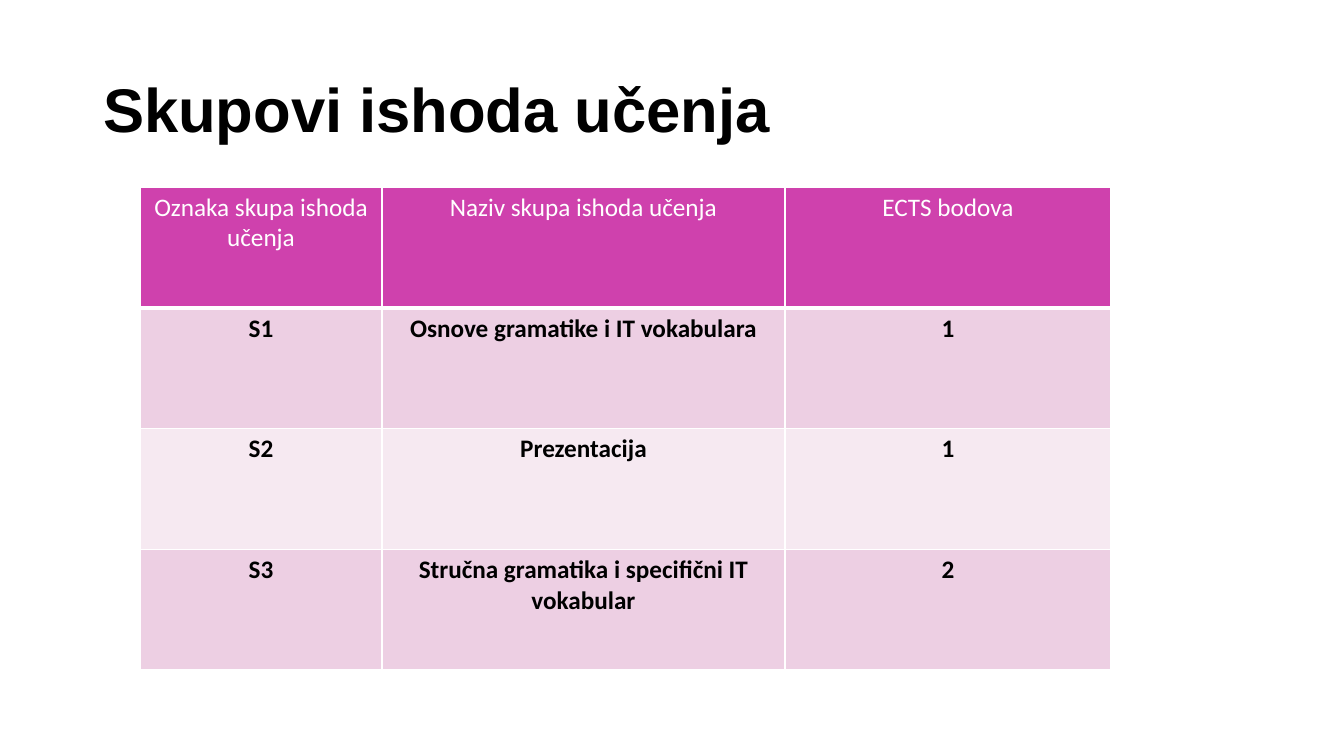
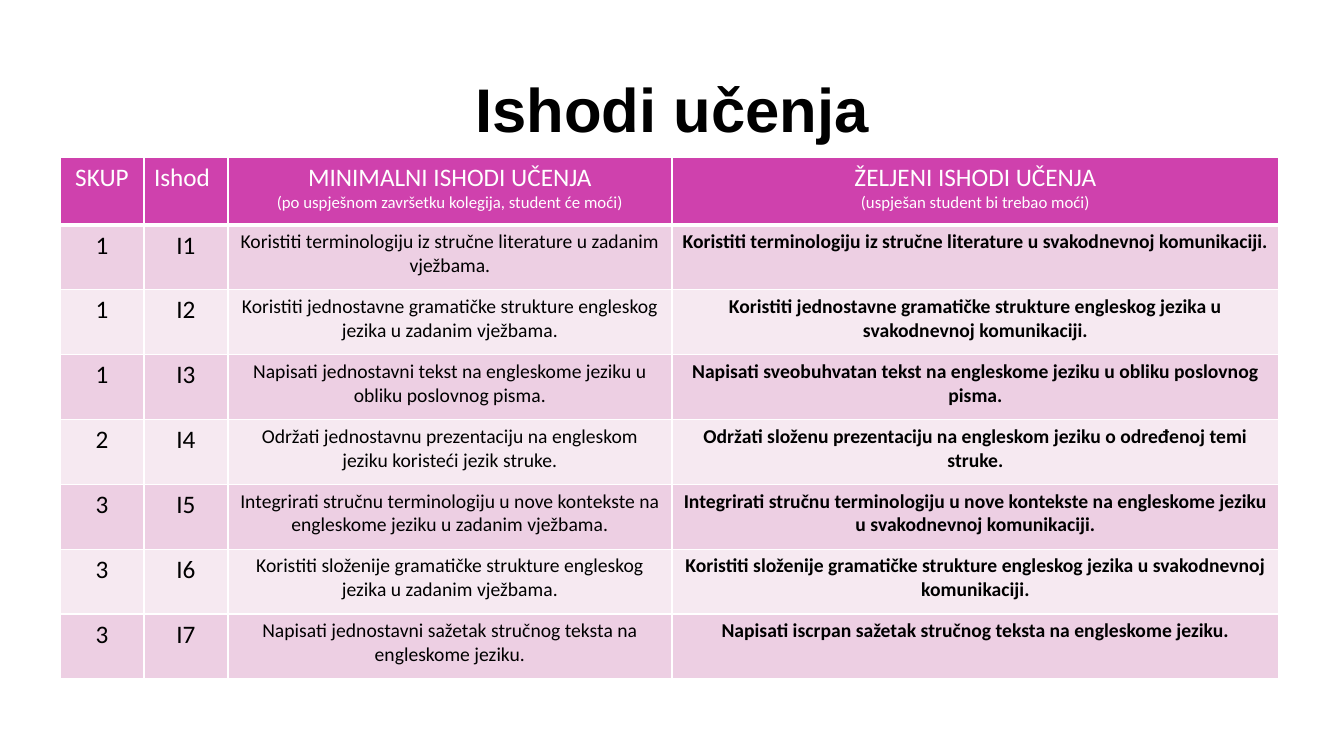
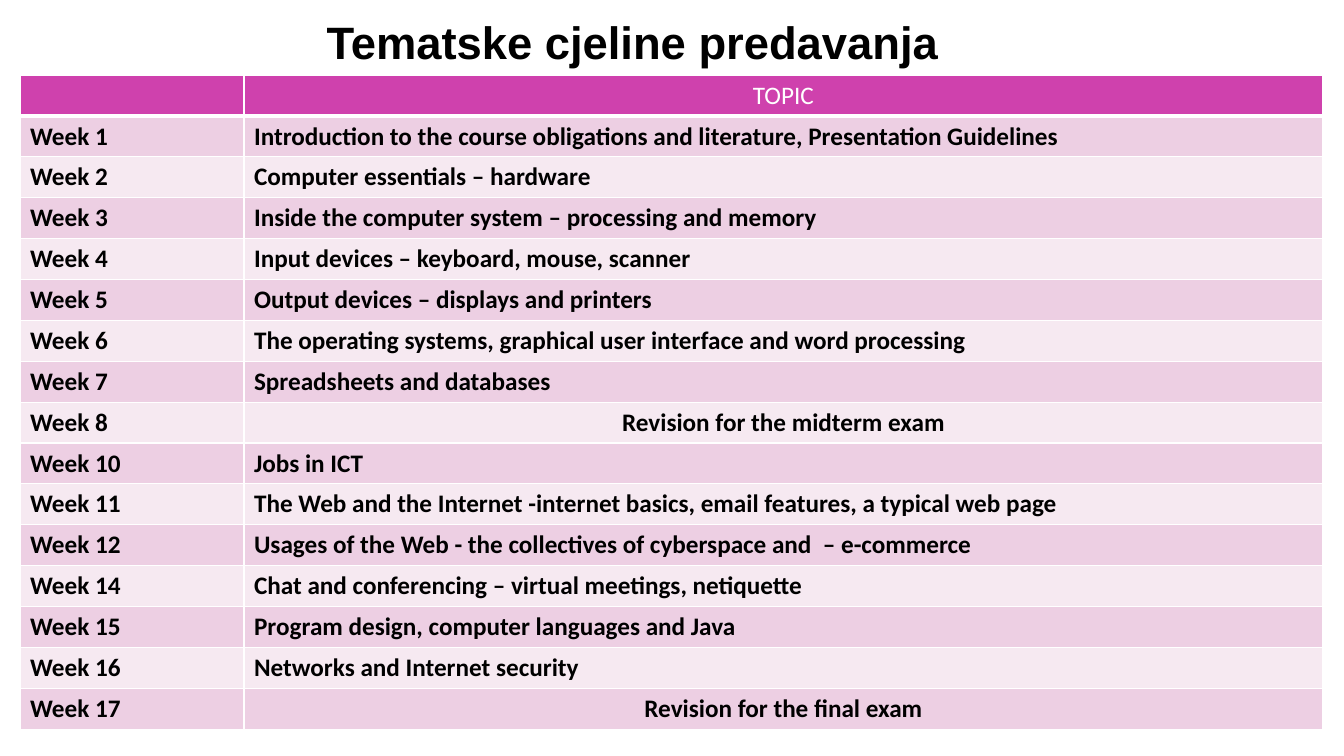
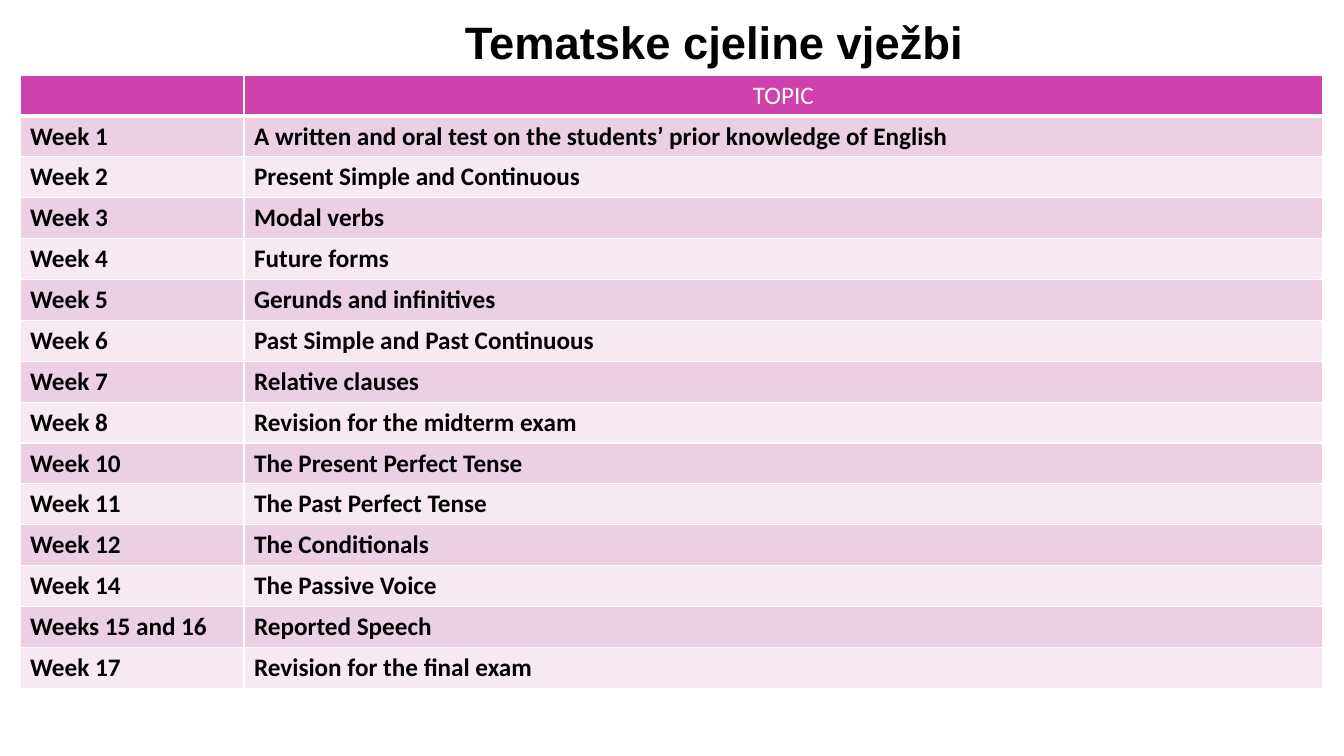
from dataclasses import dataclass

from pptx import Presentation
from pptx import util as u
from pptx.dml.color import RGBColor
from pptx.enum import text
from pptx.oxml.ns import qn
from lxml import etree

EMU_PER_PX = 914400 / 100.8
COLORS = {
    "header": "CF41AD",
    "odd": "EDCFE3",
    "even": "F6E9F1",
    "white": "FFFFFF",
    "black": "000000",
}
TITLE_FONT, TABLE_FONT = "Arial", "Calibri"
TABLE_SIZE, NOTE_SIZE = 18, 12
LEFT, CENTER = text.PP_ALIGN.LEFT, text.PP_ALIGN.CENTER


@dataclass(frozen=True)
class Title:
    text: str
    box: tuple[int, int, int, int]
    size: float = 44
    align: text.PP_ALIGN = CENTER
    indent: int = 0


@dataclass(frozen=True)
class Column:
    header: str
    width: int
    align: text.PP_ALIGN = CENTER
    size: int = TABLE_SIZE
    bold: bool = True
    header_align: text.PP_ALIGN = CENTER


@dataclass(frozen=True)
class Grid:
    left: int
    top: int
    header_height: int
    body_height: int
    columns: tuple[Column, ...]
    rows: tuple[tuple[str, ...], ...]
    centered: tuple[str, ...] = ()


def px(n: float) -> u.Emu:
    return u.Emu(round(n * EMU_PER_PX))


def rgb(name: str) -> RGBColor:
    return RGBColor.from_string(COLORS[name])


def add_run(p, content: str, font: str, size: float, bold: bool, color: str) -> None:
    r = p.add_run()
    r.text = content
    r.font.name, r.font.size, r.font.bold = font, u.Pt(size), bold
    r.font.color.rgb = rgb(color)


def draw_title(s, title: Title) -> None:
    sp = s.shapes.title
    sp.left, sp.top, sp.width, sp.height = map(px, title.box)
    tf = sp.text_frame
    tf.word_wrap = True
    tf.auto_size = text.MSO_AUTO_SIZE.NONE
    tf.vertical_anchor = text.MSO_ANCHOR.MIDDLE
    p = tf.paragraphs[0]
    p.alignment, p.line_spacing = title.align, 0.9
    if title.indent:
        p._p.get_or_add_pPr().set("marL", str(px(title.indent)))
    add_run(p, title.text, TITLE_FONT, title.size, True, "black")


def style_cell(cell, fill: str, bottom: int = 1) -> None:
    """Give a cell white borders (widths in points) and a solid fill."""
    tc_pr = cell._tc.get_or_add_tcPr()
    for side, width in (("L", 1), ("R", 1), ("T", 1), ("B", bottom)):
        ln = etree.SubElement(tc_pr, qn(f"a:ln{side}"), w=str(u.Pt(width)))
        solid = etree.SubElement(ln, qn("a:solidFill"))
        etree.SubElement(solid, qn("a:srgbClr"), val=COLORS["white"])
    cell.fill.solid()
    cell.fill.fore_color.rgb = rgb(fill)


def draw_header(cell, column: Column) -> None:
    """Fill a heading cell; lines after the first are small notes."""
    style_cell(cell, "header", bottom=3)
    tf = cell.text_frame
    for i, line in enumerate(column.header.splitlines()):
        p = tf.add_paragraph() if i else tf.paragraphs[0]
        p.alignment = column.header_align
        add_run(p, line, TABLE_FONT, NOTE_SIZE if i else TABLE_SIZE, False, "white")


def draw_grid(s, grid: Grid) -> None:
    width = sum(c.width for c in grid.columns)
    height = grid.header_height + grid.body_height
    frame = s.shapes.add_table(len(grid.rows) + 1, len(grid.columns),
                               px(grid.left), px(grid.top), px(width), px(height))
    table = frame.table
    table.horz_banding = False
    for i, row in enumerate(table.rows):
        row.height = px(grid.body_height / len(grid.rows) if i else grid.header_height)
    for j, column in enumerate(grid.columns):
        table.columns[j].width = px(column.width)
        draw_header(table.cell(0, j), column)
        for i, row in enumerate(grid.rows, start=1):
            cell = table.cell(i, j)
            style_cell(cell, "odd" if i % 2 else "even")
            p = cell.text_frame.paragraphs[0]
            p.alignment = CENTER if row[j] in grid.centered else column.align
            add_run(p, row[j], TABLE_FONT, column.size, column.bold, "black")


def topic_slide(name: str, indent: int, rows: tuple[tuple[str, str], ...],
                centered: tuple[str, ...] = ()) -> tuple[Title, Grid]:
    """Weekly plan: a compact title over a table of weeks and topics."""
    row_height = 40.8
    columns = (Column("", 224, LEFT), Column("TOPIC", 1079, LEFT))
    return (Title(name, (137, 31, 979, 27), 32.4, indent=indent),
            Grid(20, 75, round(row_height), round(row_height * len(rows)),
                 columns, rows, centered))


TITLE_BOX = (93, 40, 1159, 146)

SLIDES = (
    (
        Title("Skupovi ishoda učenja", TITLE_BOX, align=LEFT),
        Grid(
            140, 187, 121, 362,
            (Column("Oznaka skupa ishoda učenja", 242),
             Column("Naziv skupa ishoda učenja", 403),
             Column("ECTS bodova", 326)),
            (("S1", "Osnove gramatike i IT vokabulara", "1"),
             ("S2", "Prezentacija", "1"),
             ("S3", "Stručna gramatika i specifični IT vokabular", "2")),
        ),
    ),
    (
        Title("Ishodi učenja", TITLE_BOX),
        Grid(
            60, 157, 68, 454,
            (Column("SKUP", 84, bold=False),
             Column("Ishod", 84, bold=False, header_align=LEFT),
             Column("MINIMALNI ISHODI UČENJA\n"
                    "(po uspješnom završetku kolegija, student će moći)",
                    444, size=14, bold=False),
             Column("ŽELJENI ISHODI UČENJA\n(uspješan student bi trebao moći)",
                    607, size=14)),
            (("1", "I1",
              "Koristiti terminologiju iz stručne literature u zadanim vježbama.",
              "Koristiti terminologiju iz stručne literature u svakodnevnoj komunikaciji."),
             ("1", "I2",
              "Koristiti jednostavne gramatičke strukture engleskog jezika u zadanim vježbama.",
              "Koristiti jednostavne gramatičke strukture engleskog jezika u "
              "svakodnevnoj komunikaciji."),
             ("1", "I3",
              "Napisati jednostavni tekst na engleskome jeziku u obliku poslovnog pisma.",
              "Napisati sveobuhvatan tekst na engleskome jeziku u obliku poslovnog pisma."),
             ("2", "I4",
              "Održati jednostavnu prezentaciju na engleskom jeziku koristeći jezik struke.",
              "Održati složenu prezentaciju na engleskom jeziku o određenoj temi struke."),
             ("3", "I5",
              "Integrirati stručnu terminologiju u nove kontekste na engleskome jeziku "
              "u zadanim vježbama.",
              "Integrirati stručnu terminologiju u nove kontekste na engleskome jeziku "
              "u svakodnevnoj komunikaciji."),
             ("3", "I6",
              "Koristiti složenije gramatičke strukture engleskog jezika u zadanim vježbama.",
              "Koristiti složenije gramatičke strukture engleskog jezika u "
              "svakodnevnoj komunikaciji."),
             ("3", "I7",
              "Napisati jednostavni sažetak stručnog teksta na engleskome jeziku.",
              "Napisati iscrpan sažetak stručnog teksta na engleskome jeziku.")),
        ),
    ),
    topic_slide(
        "Tematske cjeline predavanja", 12,
        (("Week 1", "Introduction to the course obligations and literature, "
                    "Presentation Guidelines"),
         ("Week 2", "Computer essentials – hardware"),
         ("Week 3", "Inside the computer system – processing and memory"),
         ("Week 4", "Input devices – keyboard, mouse, scanner"),
         ("Week 5", "Output devices – displays and printers"),
         ("Week 6", "The operating systems, graphical user interface and word processing"),
         ("Week 7", "Spreadsheets and databases"),
         ("Week 8", "Revision for the midterm exam"),
         ("Week 10", "Jobs in ICT"),
         ("Week 11", "The Web and the Internet -internet basics, email features, "
                     "a typical web page"),
         ("Week 12", "Usages of the Web - the collectives of cyberspace and  – e-commerce"),
         ("Week 14", "Chat and conferencing – virtual meetings, netiquette"),
         ("Week 15", "Program design, computer languages and Java"),
         ("Week 16", "Networks and Internet security"),
         ("Week 17", "Revision for the final exam")),
        centered=("Revision for the midterm exam", "Revision for the final exam"),
    ),
    topic_slide(
        "Tematske cjeline vježbi", 175,
        (("Week 1", "A written and oral test on the students’ prior knowledge of English"),
         ("Week 2", "Present Simple and Continuous"),
         ("Week 3", "Modal verbs"),
         ("Week 4", "Future forms"),
         ("Week 5", "Gerunds and infinitives"),
         ("Week 6", "Past Simple and Past Continuous"),
         ("Week 7", "Relative clauses"),
         ("Week 8", "Revision for the midterm exam"),
         ("Week 10", "The Present Perfect Tense"),
         ("Week 11", "The Past Perfect Tense"),
         ("Week 12", "The Conditionals"),
         ("Week 14", "The Passive Voice"),
         ("Weeks 15 and 16", "Reported Speech"),
         ("Week 17", "Revision for the final exam")),
    ),
)


def main() -> None:
    prs = Presentation()
    prs.slide_width, prs.slide_height = px(1344), px(756)
    title_only = prs.slide_layouts[5]
    for title, grid in SLIDES:
        s = prs.slides.add_slide(title_only)
        draw_title(s, title)
        draw_grid(s, grid)
    prs.save("out.pptx")


if __name__ == "__main__":
    main()
